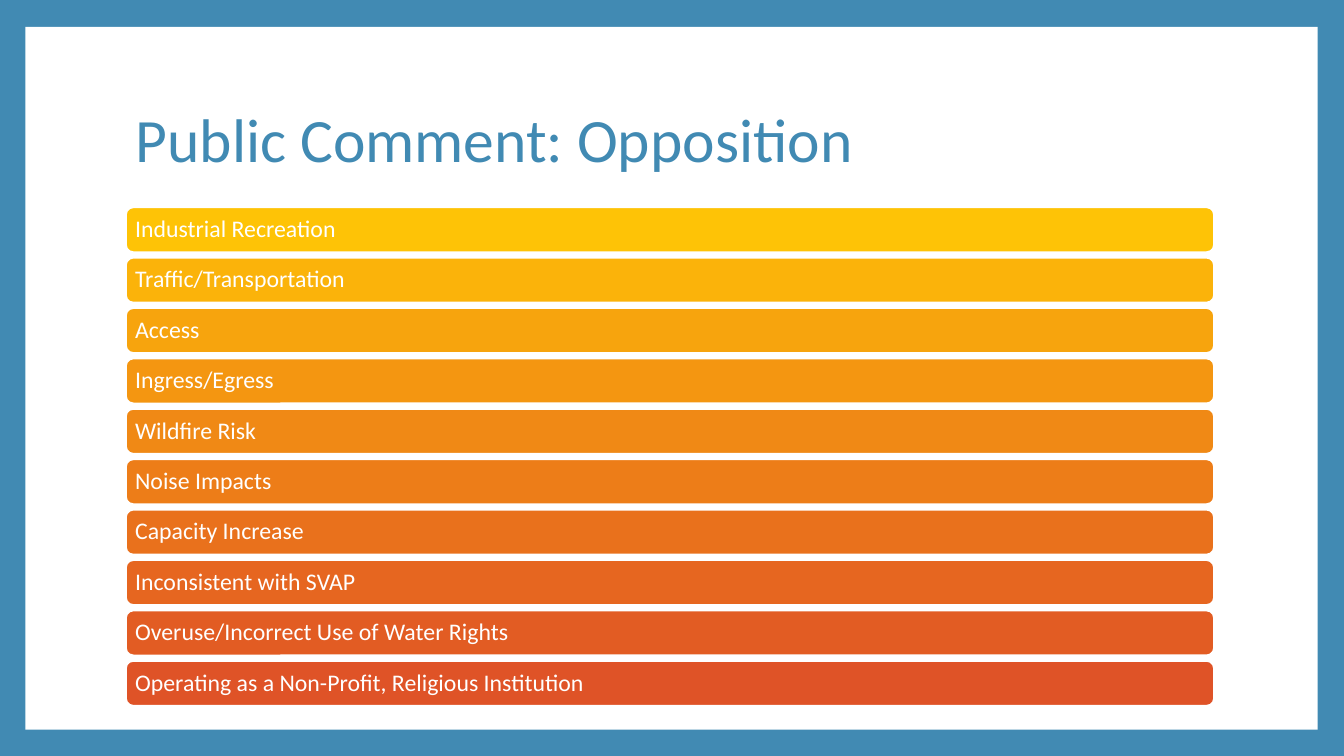
from pptx import Presentation
from pptx.dml.color import RGBColor
from pptx.enum.shapes import MSO_SHAPE
from pptx.enum.text import MSO_ANCHOR, MSO_AUTO_SIZE, PP_ALIGN
from pptx.util import Cm, Pt

RECTANGLE, ROUNDED = MSO_SHAPE.RECTANGLE, MSO_SHAPE.ROUNDED_RECTANGLE
MIDDLE, LEFT, NO_FIT = MSO_ANCHOR.MIDDLE, PP_ALIGN.LEFT, MSO_AUTO_SIZE.NONE

TITLE = "Public Comment: Opposition"
CONCERNS = [
    ("Industrial Recreation", "FEC306"),
    ("Traffic/Transportation", "FBB30A"),
    ("Access", "F7A40D"),
    ("Ingress/Egress", "F49611"),
    ("Wildfire Risk", "F08915"),
    ("Noise Impacts", "ED7D18"),
    ("Capacity Increase", "E9711C"),
    ("Inconsistent with SVAP", "E66620"),
    ("Overuse/Incorrect Use of Water Rights", "E25C23"),
    ("Operating as a Non-Profit, Religious Institution", "DF5327"),
]
BLUE, WHITE = "418AB3", "FFFFFF"
COLUMN_LEFT, COLUMN_WIDTH = 3.17, 27.43
BARS_TOP, BAR_HEIGHT, BAR_PITCH = 5.22, 1.14, 1.27


def color(hex_value):
    return RGBColor.from_string(hex_value)


def set_text(shape, text, *, size, text_color, inset, font="Calibri"):
    frame = shape.text_frame
    frame.text = text
    frame.word_wrap = True
    frame.auto_size = NO_FIT
    frame.vertical_anchor = MIDDLE
    frame.margin_left = frame.margin_right = Cm(inset)
    frame.margin_top = frame.margin_bottom = Cm(0.13)
    line = frame.paragraphs[0]
    line.alignment = LEFT
    line.line_spacing = 0.9
    line.font.name = font
    line.font.size = Pt(size)
    line.font.color.rgb = color(text_color)


def add_panel(slide, preset, left, top, width, height, fill):
    panel = slide.shapes.add_shape(preset, Cm(left), Cm(top), Cm(width), Cm(height))
    panel.shadow.inherit = False
    panel.fill.solid()
    panel.fill.fore_color.rgb = color(fill)
    panel.line.fill.background()
    return panel


def main():
    deck = Presentation()
    deck.slide_width, deck.slide_height = Cm(33.87), Cm(19.05)
    slide = deck.slides.add_slide(deck.slide_layouts.get_by_name("Title Only"))
    slide.background.fill.solid()
    slide.background.fill.fore_color.rgb = color(BLUE)

    page = add_panel(slide, RECTANGLE, 0.64, 0.68, 32.57, 17.71, WHITE)
    title = slide.shapes.title
    page._element.addnext(title._element)  # keeps the title in front of the page
    title.left, title.top = Cm(COLUMN_LEFT), Cm(1.7)
    title.width, title.height = Cm(COLUMN_WIDTH), Cm(3.76)
    set_text(title, TITLE, size=44, text_color=BLUE, inset=0.25)

    for row, (concern, fill) in enumerate(CONCERNS):
        bar = add_panel(slide, ROUNDED, COLUMN_LEFT, BARS_TOP + row * BAR_PITCH,
                        COLUMN_WIDTH, BAR_HEIGHT, fill)
        bar.line.color.rgb = color(WHITE)
        bar.line.width = Pt(1.5)
        set_text(bar, concern, size=17, text_color=WHITE, inset=0.18)

    deck.save("out.pptx")


if __name__ == "__main__":
    main()
